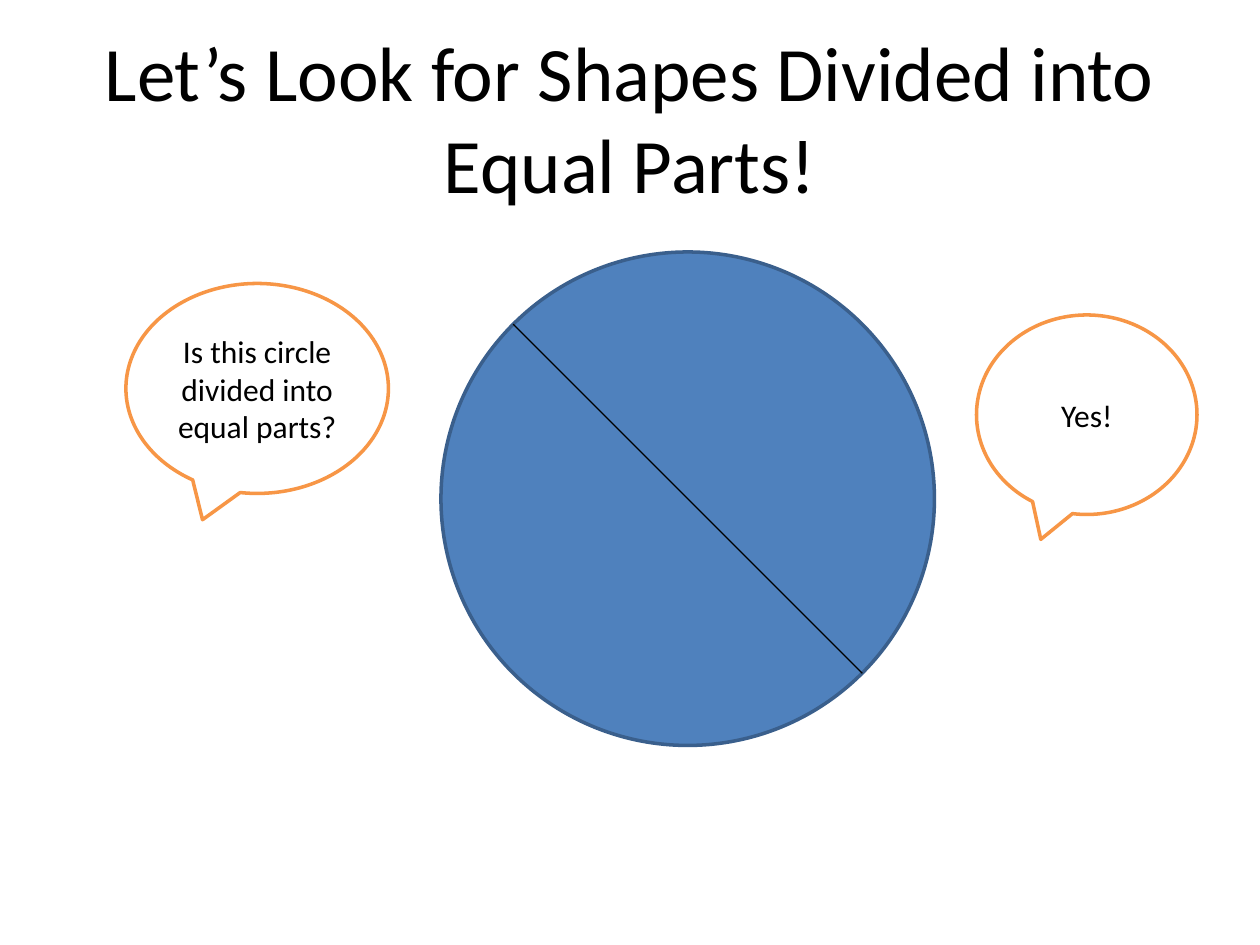
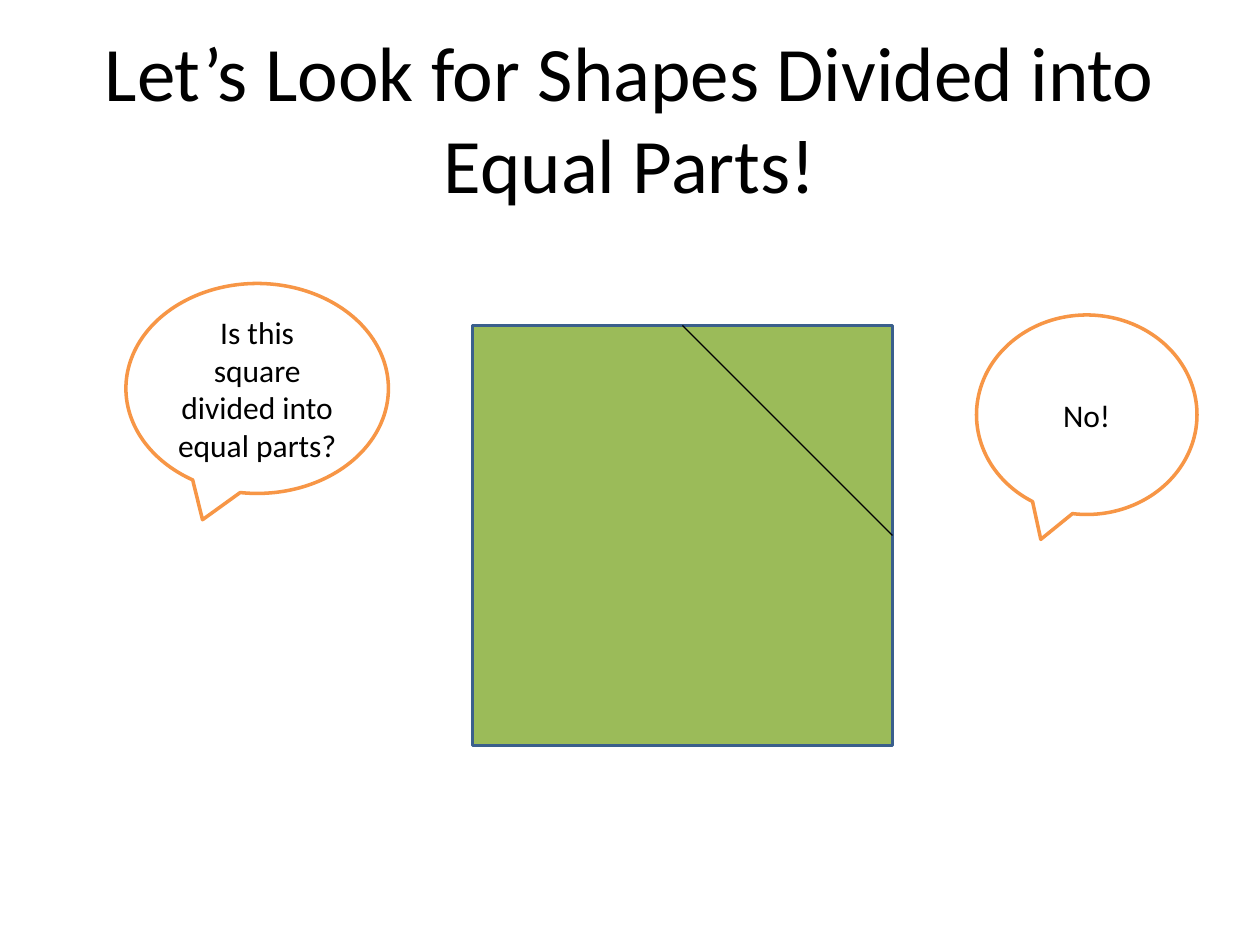
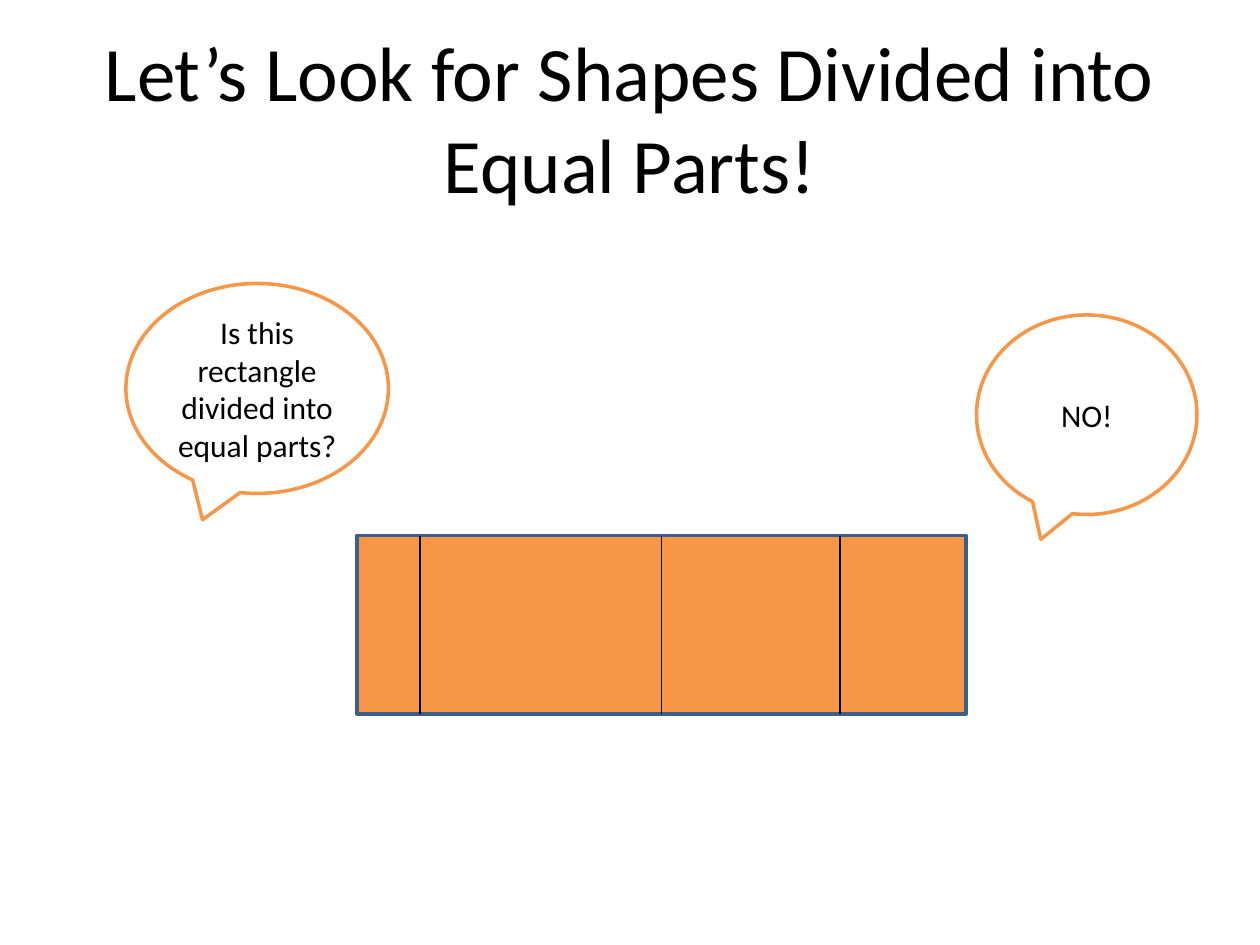
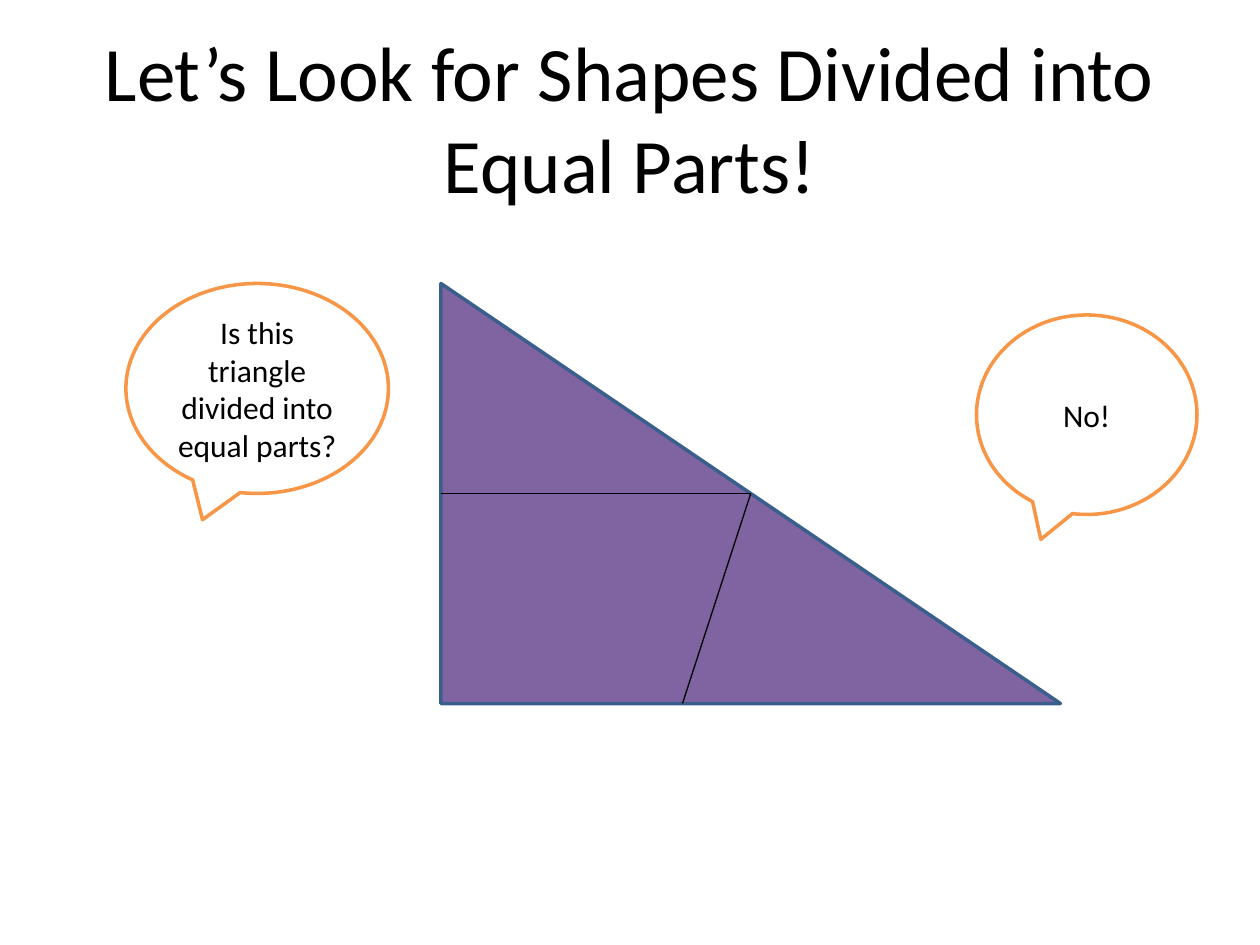
from lxml.etree import SubElement
from pptx import Presentation
from pptx.dml.color import RGBColor
from pptx.enum.shapes import MSO_CONNECTOR, MSO_SHAPE
from pptx.enum.text import MSO_ANCHOR, PP_ALIGN
from pptx.oxml.ns import qn
from pptx.util import Pt

# Shared measures, colours and text formats
PX = 9525  # EMU per px, 96 px to the inch
COLORS = {
    "black": "000000",
    "white": "FFFFFF",
    "outline": "3A5F8C",
    "blue": "4F81BD",
    "green": "9BBB59",
    "orange": "F79646",
    "purple": "8064A2",
}
TITLE = "Let’s Look for Shapes Divided into Equal Parts!"
TITLE_BOX = (48, 29, 864, 120)
ANSWER_BOX = (744, 240, 168, 152)
QUESTION_BOX = (96, 216, 200, 160)
TITLE_FONT = {"name": "Calibri", "size": Pt(44)}
BUBBLE_FONT = {"name": "Calibri", "size": Pt(18)}

# Each figure: name, answer, preset, fill, box,
# dividers (start, end, connection sites of the figure or None)
FIGURES = [
    ("circle", "Yes!", MSO_SHAPE.OVAL, "blue", (336, 192, 376, 376),
     [((391, 247), (657, 513), None)]),
    ("square", "No!", MSO_SHAPE.RECTANGLE, "green", (360, 248, 320, 320),
     [((520, 248), (680, 408), (0, 3))]),
    ("rectangle", "NO!", MSO_SHAPE.RECTANGLE, "orange", (272, 408, 464, 136),
     [((x, 408), (x, 544), sites)
      for x, sites in ((320, None), (504, (0, 2)), (640, None))]),
    ("triangle", "No!", MSO_SHAPE.RIGHT_TRIANGLE, "purple", (336, 216, 472, 320),
     [((336, 376), (572, 376), None), ((572, 376), (520, 536), None)]),
]


def write_text(shape, text, font_format):
    text_frame = shape.text_frame
    text_frame.word_wrap = True
    text_frame.vertical_anchor = MSO_ANCHOR.MIDDLE
    paragraph = text_frame.paragraphs[0]
    paragraph.alignment = PP_ALIGN.CENTER
    run = paragraph.add_run()
    run.text = text
    run.font.color.rgb = RGBColor.from_string(COLORS["black"])
    for attribute, value in font_format.items():
        setattr(run.font, attribute, value)


def add_outlined_shape(slide, preset, box, fill, line):
    shape = slide.shapes.add_shape(preset, *[value * PX for value in box])
    shape.shadow.inherit = False
    shape.fill.solid()
    shape.fill.fore_color.rgb = RGBColor.from_string(COLORS[fill])
    shape.line.color.rgb = RGBColor.from_string(COLORS[line])
    shape.line.width = Pt(2)
    return shape


presentation = Presentation()
presentation.slide_width = 960 * PX
presentation.slide_height = 720 * PX
title_only = presentation.slide_layouts[5]

for name, answer, preset, fill, box, dividers in FIGURES:
    slide = presentation.slides.add_slide(title_only)

    # Title
    title = slide.shapes.title
    for attribute, value in zip(("left", "top", "width", "height"), TITLE_BOX):
        setattr(title, attribute, value * PX)
    write_text(title, TITLE, TITLE_FONT)

    # Speech bubbles
    question = f"Is this {name} divided into equal parts?"
    for text, bubble_box in ((answer, ANSWER_BOX), (question, QUESTION_BOX)):
        bubble = add_outlined_shape(
            slide, MSO_SHAPE.OVAL_CALLOUT, bubble_box, "white", "orange")
        write_text(bubble, text, BUBBLE_FONT)

    # Figure and its dividing lines
    figure = add_outlined_shape(slide, preset, box, fill, "outline")
    for start, end, sites in dividers:
        divider = slide.shapes.add_connector(
            MSO_CONNECTOR.STRAIGHT, *[value * PX for value in start + end])
        divider.line.color.rgb = RGBColor.from_string(COLORS["black"])
        divider.line.width = Pt(0.75)
        SubElement(divider._element.spPr, qn("a:effectLst"))
        if sites:
            divider.begin_connect(figure, sites[0])
            divider.end_connect(figure, sites[1])

presentation.save("out.pptx")
